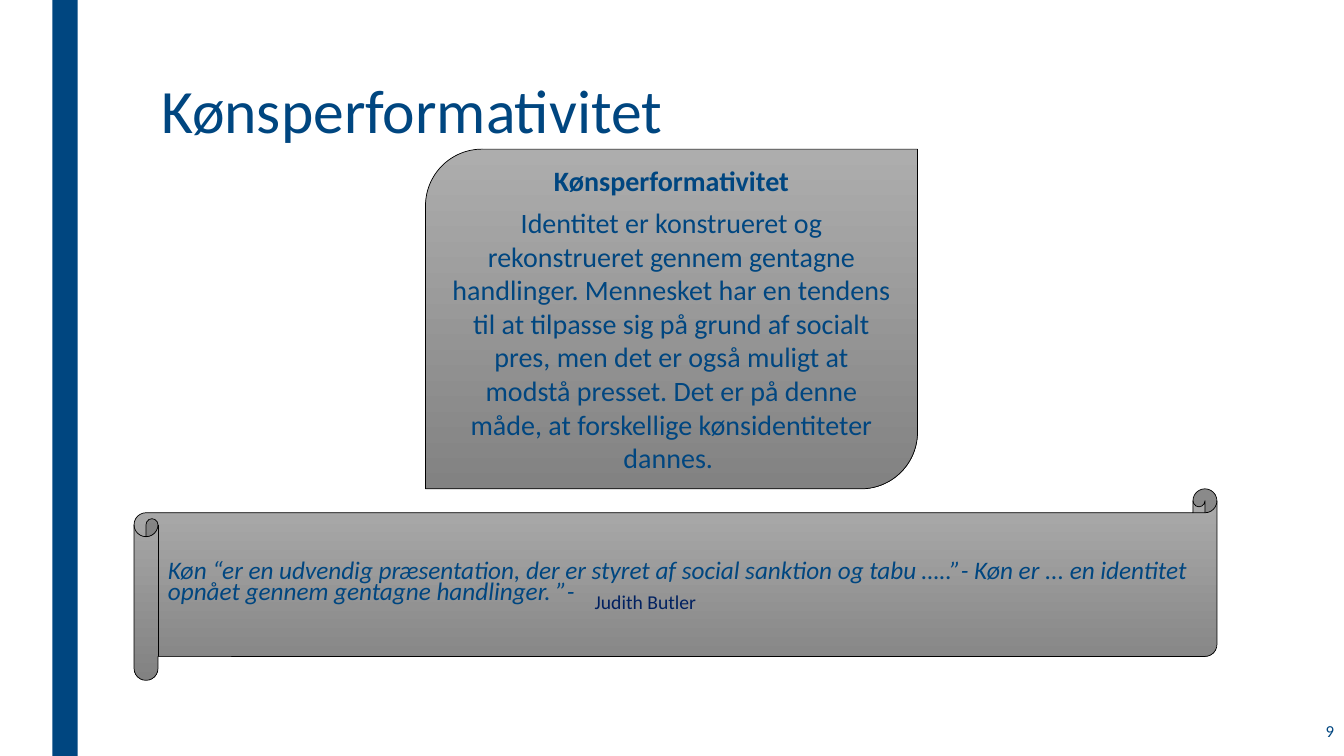
from pptx import Presentation
from pptx.dml.color import RGBColor
from pptx.enum.shapes import MSO_SHAPE
from pptx.enum.text import MSO_ANCHOR, PP_ALIGN
from pptx.util import Inches, Pt

BLUE = RGBColor(0x00, 0x46, 0x80)
NAVY = RGBColor(0x00, 0x20, 0x60)
BLACK = RGBColor(0x00, 0x00, 0x00)
LIGHT_GREY = RGBColor(0xAD, 0xAD, 0xAD)
DARK_GREY = RGBColor(0x82, 0x82, 0x82)


def write(frame, text, size=20, color=BLUE, bold=False, italic=False,
          align=PP_ALIGN.LEFT, anchor=MSO_ANCHOR.TOP, spacing=None):
    """Fill the empty first paragraph, or add another one below it."""
    frame.word_wrap = True
    frame.vertical_anchor = anchor
    paragraph = frame.paragraphs[0]
    if paragraph.runs:
        paragraph = frame.add_paragraph()
        paragraph.space_before = Pt(6)
    paragraph.alignment = align
    paragraph.line_spacing = spacing
    run = paragraph.add_run()
    run.text = text
    run.font.name = "Calibri"
    run.font.size = Pt(size)
    run.font.color.rgb = color
    run.font.bold = bold
    run.font.italic = italic


def add_panel(preset, left, top, width, height):
    """Add a grey gradient panel with a thin black outline."""
    panel = slide.shapes.add_shape(
        preset, Inches(left), Inches(top), Inches(width), Inches(height))
    panel.shadow.inherit = False
    panel.fill.gradient()
    panel.fill.gradient_angle = 270
    for stop, color in zip(panel.fill.gradient_stops, (LIGHT_GREY, DARK_GREY)):
        stop.color.rgb = color
    panel.line.color.rgb = BLACK
    panel.line.width = Pt(0.5)
    return panel.text_frame


prs = Presentation()
prs.slide_width = Inches(13.33)
prs.slide_height = Inches(7.5)
slide = prs.slides.add_slide(prs.slide_layouts[6])

# Blue band on the left
band = slide.shapes.add_shape(
    MSO_SHAPE.RECTANGLE, Inches(0.52), 0, Inches(0.25), prs.slide_height)
band.shadow.inherit = False
band.fill.solid()
band.fill.fore_color.rgb = BLUE
band.line.fill.background()

# Title and slide number
title = slide.shapes.add_textbox(
    Inches(1.5), Inches(0.75), Inches(10.5), Inches(1.62))
write(title.text_frame, "Kønsperformativitet", size=44, spacing=0.89)

slide_number = slide.shapes.add_textbox(
    Inches(11.58), Inches(7.03), Inches(1.75), Inches(0.44))
write(slide_number.text_frame, "9", size=12, align=PP_ALIGN.RIGHT,
      anchor=MSO_ANCHOR.MIDDLE)

# Definition
definition = add_panel(MSO_SHAPE.ROUND_2_DIAG_RECTANGLE, 4.22, 1.48, 4.88, 3.37)
write(definition, "Kønsperformativitet", bold=True, align=PP_ALIGN.CENTER,
      anchor=MSO_ANCHOR.MIDDLE)
write(definition,
      "Identitet er konstrueret og rekonstrueret gennem gentagne handlinger. "
      "Mennesket har en tendens til at tilpasse sig på grund af socialt pres, "
      "men det er også muligt at modstå presset. Det er på denne måde, at "
      "forskellige kønsidentiteter dannes. ",
      align=PP_ALIGN.CENTER, anchor=MSO_ANCHOR.MIDDLE)

# Quotation and its author
quotation = add_panel(MSO_SHAPE.HORIZONTAL_SCROLL, 1.33, 4.85, 10.74, 1.9)
write(quotation,
      "Køn “er en udvendig præsentation, der er styret af social sanktion og "
      "tabu …..”- Køn er ... en identitet opnået gennem gentagne handlinger. ”-",
      size=18, italic=True, anchor=MSO_ANCHOR.MIDDLE, spacing=Pt(15))

author = slide.shapes.add_textbox(
    Inches(5.8), Inches(5.8), Inches(6.2), Inches(0.34))
write(author.text_frame, "Judith Butler", size=14, color=NAVY)

prs.save("out.pptx")
